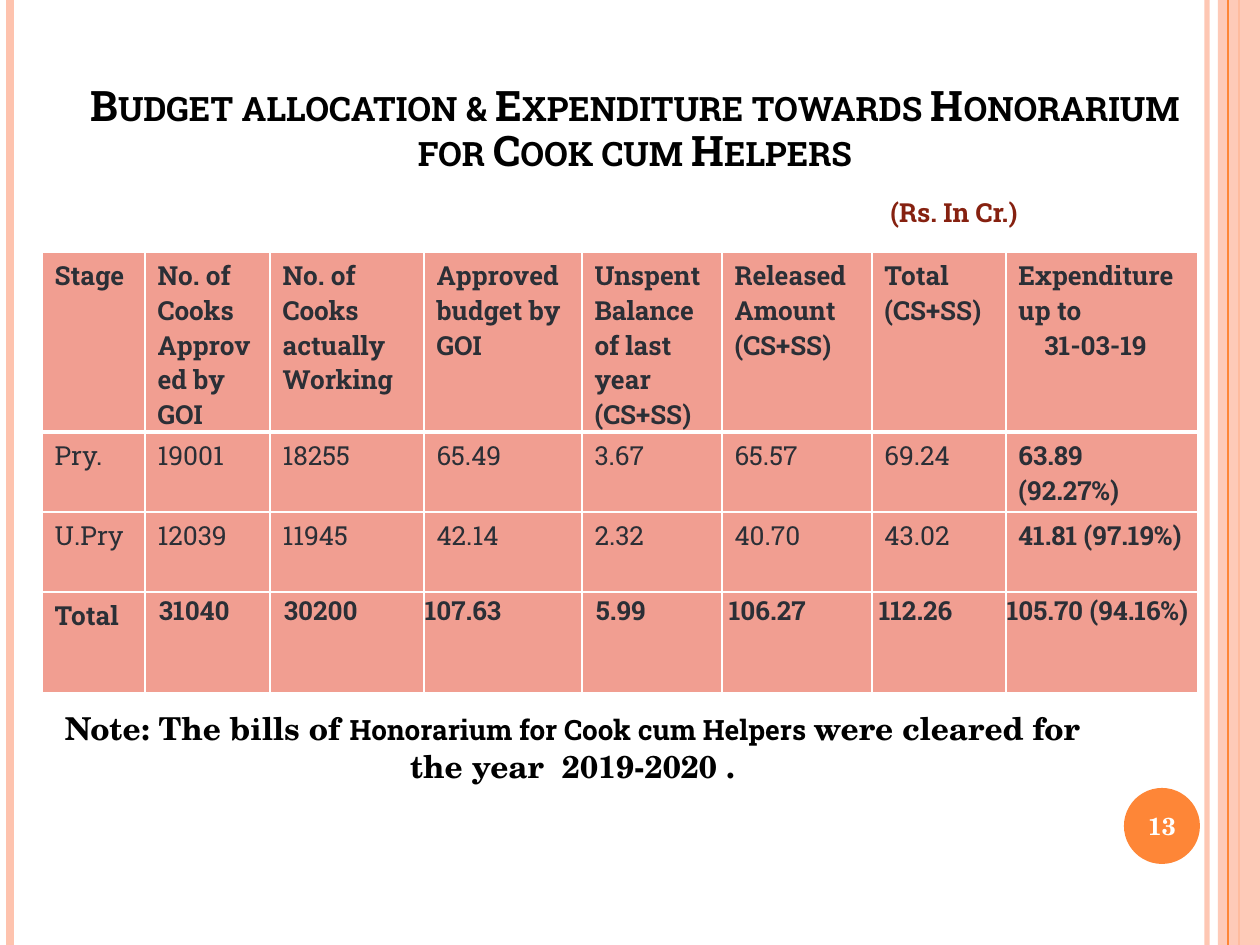
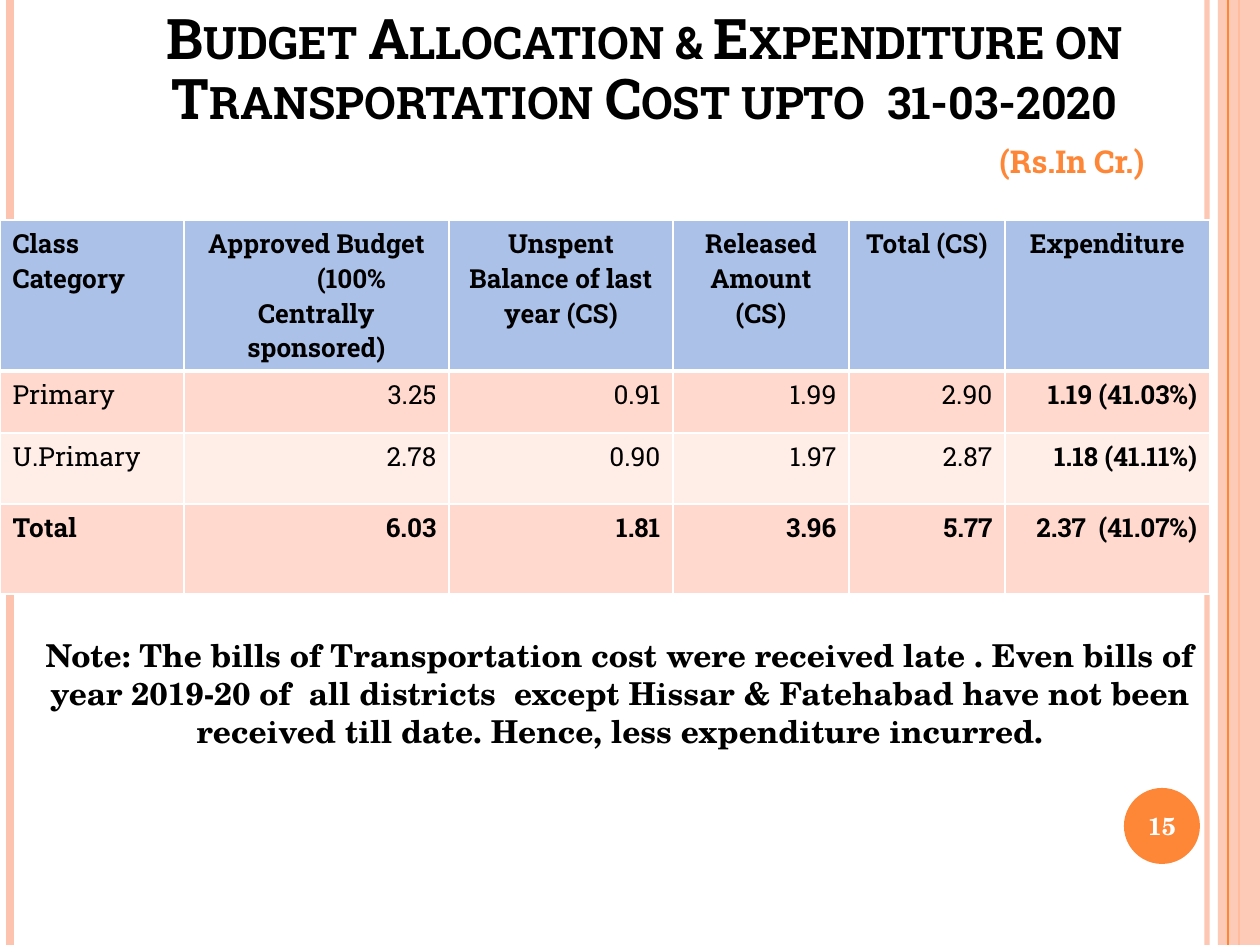
from lxml import etree
from pptx import Presentation
from pptx.dml.color import RGBColor
from pptx.enum.shapes import MSO_CONNECTOR, MSO_SHAPE
from pptx.enum.text import MSO_ANCHOR, PP_ALIGN
from pptx.oxml.ns import qn
from pptx.util import Emu, Pt

EMU_PER_PX = 914400 / 126
SLIDE_WIDTH, SLIDE_HEIGHT = 1260, 945
LEFT, CENTER, RIGHT = PP_ALIGN.LEFT, PP_ALIGN.CENTER, PP_ALIGN.RIGHT
TOP, MIDDLE, BOTTOM = MSO_ANCHOR.TOP, MSO_ANCHOR.MIDDLE, MSO_ANCHOR.BOTTOM
STRAIGHT, RECTANGLE, OVAL = MSO_CONNECTOR.STRAIGHT, MSO_SHAPE.RECTANGLE, MSO_SHAPE.OVAL

SLAB, SCHOLA = "Roboto Slab", "TeX Gyre Schola"
BLACK, WHITE, ORANGE, PEACH = "000000", "FFFFFF", "FE8637", "FEC3AE"
MAROON, CHARCOAL = "862110", "2B2F36"
SALMON, BLUE, PINK, PALE_PINK = "F19E91", "ACC1E8", "FFD9CE", "FFEDE8"

NOTE = {"name": SCHOLA, "size": 18, "color": BLACK, "bold": True}
NOTE_SLAB = {**NOTE, "name": SLAB, "size": 16}
PAGE_NUMBER = {**NOTE, "size": 14, "color": WHITE}

# x, width in points, colour, opacity in percent
RULES = [(1207, 3, PEACH, 93), (10, 4.5, PEACH, 100), (1239, 1.5, ORANGE, 100)]
INNER_RULE = (1228, 0.75, ORANGE, 100)


def px(length):
    return Emu(round(length * EMU_PER_PX))


def rgb(hex_color):
    return RGBColor.from_string(hex_color)


def set_values(target, values):
    for name, value in values.items():
        setattr(target, name, value)


def set_opacity(fill_parent, percent):
    color = fill_parent.find(".//" + qn("a:srgbClr"))
    etree.SubElement(color, qn("a:alpha")).set("val", str(percent * 1000))


def add_run(paragraph, text, style):
    run = paragraph.add_run()
    run.text = text
    set_values(run.font, {"name": style["name"], "size": Pt(style["size"]),
                          "bold": style["bold"]})
    run.font.color.rgb = rgb(style["color"])
    return run


def add_text(slide, box, runs, alignment=LEFT, anchor=TOP):
    """Add a wrapped one-paragraph text box; runs are (text, style) pairs."""
    shape = slide.shapes.add_textbox(*map(px, box))
    set_values(shape.text_frame, {"word_wrap": True, "vertical_anchor": anchor})
    paragraph = shape.text_frame.paragraphs[0]
    paragraph.alignment = alignment
    for text, style in runs:
        add_run(paragraph, text, style)
    return shape


def add_rule(slide, x, width, color, opacity):
    rule = slide.shapes.add_connector(STRAIGHT, px(x), 0, px(x), px(SLIDE_HEIGHT))
    rule.line.width = Pt(width)
    rule.line.color.rgb = rgb(color)
    properties = rule._element.spPr
    if opacity < 100:
        set_opacity(properties, opacity)
    etree.SubElement(properties, qn("a:effectLst"))


def add_filled_shape(slide, kind, box, color):
    shape = slide.shapes.add_shape(kind, *map(px, box))
    shape.shadow.inherit = False
    shape.fill.solid()
    shape.fill.fore_color.rgb = rgb(color)
    shape.line.fill.background()
    return shape


def add_frame(slide, page_number):
    """Add the side rules, the right band and the page number disc."""
    for rule in RULES:
        add_rule(slide, *rule)
    band = add_filled_shape(slide, RECTANGLE, (1218, 0, 42, SLIDE_HEIGHT), PEACH)
    set_opacity(band._element.spPr, 87)
    add_rule(slide, *INNER_RULE)
    disc = add_filled_shape(slide, OVAL, (1124, 788, 76, 76), ORANGE)
    set_values(disc.text_frame, {"margin_left": 0, "margin_right": 0,
                                 "vertical_anchor": MIDDLE})
    paragraph = disc.text_frame.paragraphs[0]
    paragraph.alignment = CENTER
    add_run(paragraph, str(page_number), PAGE_NUMBER)


def add_title(slide, box, text, size):
    style = {"name": SLAB, "size": size, "color": BLACK, "bold": True}
    title = add_text(slide, box, [(text, style)], CENTER, BOTTOM)
    title.text_frame.margin_bottom = 0
    paragraph = title.text_frame.paragraphs[0]
    paragraph.line_spacing = 0.9
    paragraph.runs[0].font._element.set("cap", "small")


def add_unit(slide, box, text, size, color):
    style = {"name": SLAB, "size": size, "color": color, "bold": True}
    add_text(slide, box, [(text, style)])


def set_borders(cell, row_index):
    """Draw thin white borders, with a thicker one under the header row."""
    thick_side = {0: "lnB", 1: "lnT"}.get(row_index)
    for side in ("lnL", "lnR", "lnT", "lnB"):
        width = Pt(3 if side == thick_side else 1)
        line = etree.SubElement(cell._tc.get_or_add_tcPr(), qn("a:" + side), w=str(width))
        fill = etree.SubElement(line, qn("a:solidFill"))
        etree.SubElement(fill, qn("a:srgbClr"), val=WHITE)


def fill_cell(cell, content, style, alignment):
    """Write a string, or several (text, indent in px) paragraphs."""
    lines = [(content, 0)] if isinstance(content, str) else content
    for index, (text, indent) in enumerate(lines):
        frame = cell.text_frame
        paragraph = frame.add_paragraph() if index else frame.paragraphs[0]
        paragraph.alignment = alignment
        if indent:
            paragraph._p.get_or_add_pPr().set("marL", str(px(indent)))
        add_run(paragraph, text, style)


def add_budget_table(slide, origin, widths, heights, rows, fills, color,
                     header_alignment, value_alignment):
    box = (*origin, sum(widths), sum(heights))
    table = slide.shapes.add_table(len(rows), len(widths), *map(px, box)).table
    set_values(table, {"first_row": False, "horz_banding": False})
    for column, width in zip(table.columns, widths):
        column.width = px(width)
    for row, height in zip(table.rows, heights):
        row.height = px(height)
    last_row, last_column = len(rows) - 1, len(widths) - 1
    for row_index, contents in enumerate(rows):
        for column_index, content in enumerate(contents):
            cell = table.cell(row_index, column_index)
            set_borders(cell, row_index)
            cell.fill.solid()
            cell.fill.fore_color.rgb = rgb(fills[row_index])
            bold = row_index in (0, last_row) or column_index == last_column
            style = {"name": SLAB, "size": 15, "color": color, "bold": bold}
            alignment = header_alignment if row_index == 0 else value_alignment
            fill_cell(cell, content, style, alignment if column_index else LEFT)
    return table


def add_honorarium_slide(slide):
    add_frame(slide, 13)
    add_title(slide, (63, 29, 1144, 147),
              "Budget allocation & Expenditure towards Honorarium for Cook cum Helpers", 24)
    rows = [
        ["Stage", "No. of Cooks Approved by GOI", "No. of Cooks actually Working",
         "Approved budget by GOI", "Unspent Balance of last year (CS+SS)",
         "Released Amount (CS+SS)", "Total (CS+SS)",
         [("Expenditure up to", 0), ("31-03-19", 26)]],
        ["Pry.", "19001", "18255", "65.49", "3.67", "65.57", "69.24", "63.89 (92.27%)"],
        ["U.Pry", "12039", "11945", "42.14", "2.32", "40.70", "43.02", "41.81 (97.19%)"],
        ["Total", "31040", "30200", "107.63", "5.99", "106.27", "112.26",
         "105.70 (94.16%)"],
    ]
    table = add_budget_table(slide, (42, 252), [103, 125, 154, 158, 140, 150, 134, 192],
                             [180, 80, 80, 101], rows, [SALMON] * 4, CHARCOAL, LEFT, LEFT)
    for column_index, margin in enumerate([14, 14, 1, 14, 7, 7, 1], start=1):
        set_values(table.cell(3, column_index),
                   {"margin_left": px(margin), "margin_right": px(1),
                    "margin_top": px(1), "margin_bottom": 0})
    add_unit(slide, (878, 190, 252, 47), "(Rs. In Cr.)", 15, MAROON)
    add_text(slide, (32, 703, 1081, 89),
             [("Note: The bills of ", NOTE),
              ("Honorarium for Cook cum Helpers ", NOTE_SLAB),
              ("were cleared for the year  2019-2020 .", NOTE)], CENTER)


def add_transportation_slide(slide):
    add_frame(slide, 15)
    add_title(slide, (29, 0, 1231, 132),
              "Budget Allocation & Expenditure on Transportation Cost upto  31-03-2020", 32)
    rows = [
        ["Class Category",
         [("Approved Budget", 0), ("(100%", 70), ("Centrally sponsored)", 0)],
         "Unspent Balance of last year (CS)", "Released Amount (CS)", "Total (CS)",
         "Expenditure"],
        ["Primary", "3.25", "0.91", "1.99", "2.90", "1.19 (41.03%)"],
        ["U.Primary", "2.78", "0.90", "1.97", "2.87", "1.18 (41.11%)"],
        ["Total", "6.03", "1.81", "3.96", "5.77", "2.37  (41.07%)"],
    ]
    add_budget_table(slide, (0, 220), [184, 265, 224, 176, 156, 205], [151, 62, 71, 90],
                     rows, [BLUE, PINK, PALE_PINK, PINK], BLACK, CENTER, RIGHT)
    add_unit(slide, (987, 136, 262, 51), "(Rs.In Cr.)", 18, ORANGE)
    add_text(slide, (32, 630, 1176, 127),
             [("Note: The bills of Transportation cost were received late . Even bills of "
               "year 2019-20 of  all districts  except Hissar & Fatehabad have not been "
               "received till date. Hence, less expenditure incurred.", NOTE)], CENTER)


def main():
    presentation = Presentation()
    set_values(presentation, {"slide_width": px(SLIDE_WIDTH),
                              "slide_height": px(SLIDE_HEIGHT)})
    blank_layout = presentation.slide_layouts[6]
    for build in (add_honorarium_slide, add_transportation_slide):
        build(presentation.slides.add_slide(blank_layout))
    presentation.save("out.pptx")


if __name__ == "__main__":
    main()
